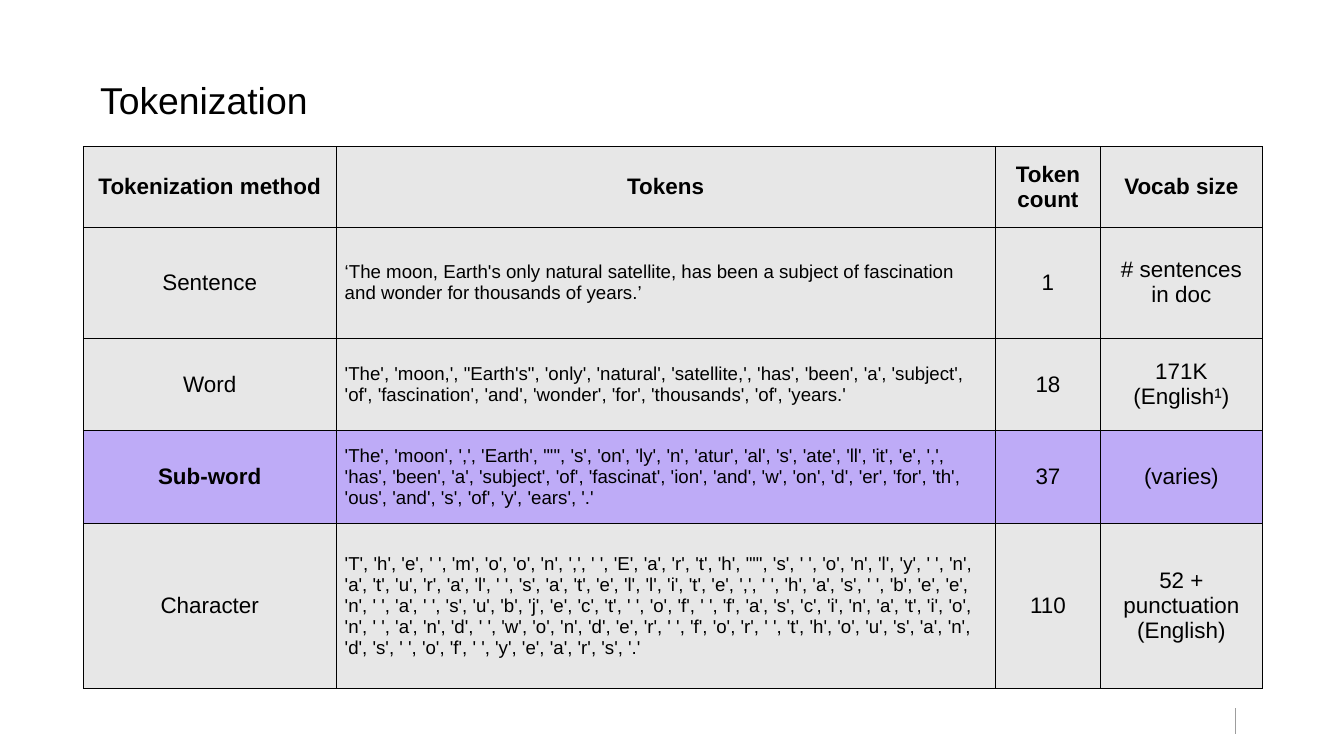
import pptx
import pptx.util
import pptx.dml.color
import pptx.enum.text
import pptx.enum.shapes
import pptx.oxml
import pptx.oxml.ns
from lxml import etree

Inches = pptx.util.Inches
Pt = pptx.util.Pt
RGBColor = pptx.dml.color.RGBColor
qn = pptx.oxml.ns.qn
MIDDLE = pptx.enum.text.MSO_ANCHOR.MIDDLE
ALIGN = pptx.enum.text.PP_ALIGN

BLACK = RGBColor(0x00, 0x00, 0x00)
GREY = RGBColor(0xE7, 0xE7, 0xE7)
PURPLE = RGBColor(0xBE, 0xAB, 0xF7)
RULE = RGBColor(0x9D, 0x9D, 0x9D)


def style(para, size, bold=False):
    para.font.name = "Arial"
    para.font.size = Pt(size)
    para.font.bold = bold
    para.font.color.rgb = BLACK


def border(cell):
    props = cell._tc.get_or_add_tcPr()
    for place, side in enumerate(("lnL", "lnR", "lnT", "lnB")):
        line = etree.Element(qn("a:" + side), w=str(Pt(1)))
        fill = etree.SubElement(line, qn("a:solidFill"))
        etree.SubElement(fill, qn("a:srgbClr"), val=str(BLACK))
        props.insert(place, line)


deck = pptx.Presentation()
deck.slide_width = Inches(20)
deck.slide_height = Inches(11.25)
slide = deck.slides.add_slide(deck.slide_layouts[6])

# Footer rule
rule = slide.shapes.add_connector(
    pptx.enum.shapes.MSO_CONNECTOR.STRAIGHT,
    Inches(18.38), Inches(10.54), Inches(18.38), Inches(10.92))
rule.line.color.rgb = RULE
rule.line.width = Pt(1)
etree.SubElement(rule._element.spPr, qn("a:effectLst"))

# Title
title = slide.shapes.add_textbox(
    Inches(1.49), Inches(0.71), Inches(16.62), Inches(1.63))
frame = title.text_frame
frame.word_wrap = True
frame.vertical_anchor = MIDDLE
frame.margin_left = frame.margin_right = 0
frame.margin_top = frame.margin_bottom = Inches(0.07)
para = frame.paragraphs[0]
para.text = "Tokenization"
para.line_spacing = 0.9
style(para, 40)

# One sentence, split four ways; each list shows as quoted tokens
text = ("The moon, Earth's only natural satellite, has been a subject of "
        "fascination and wonder for thousands of years.")
parts = ("The moon , Earth ' s on ly n atur al s ate ll it e , has been a "
         "subject of fascinat ion and w on d er for th ous and s of y ears .")
words, pieces, chars = [
    str(tokens)[1:-1] for tokens in (text.split(), parts.split(), list(text))]

rows = [
    ("Tokenization method", "Tokens", "Token count", "Vocab size"),
    ("Sentence", f"‘{text}’", "1", "# sentences in doc"),
    ("Word", words, "18", "171K (English¹)"),
    ("Sub-word", pieces, "37", "(varies)"),
    ("Character", chars, "110", "52 + punctuation (English)"),
]
widths = [3.76, 9.81, 1.57, 2.4]
heights = [1.2, 1.65, 1.38, 1.38, 2.46]

# Table
table = slide.shapes.add_table(
    len(rows), len(widths), Inches(1.24), Inches(2.18),
    Inches(sum(widths)), Inches(sum(heights))).table
for col, width in zip(table.columns, widths):
    col.width = Inches(width)
for row, height in zip(table.rows, heights):
    row.height = Inches(height)

for r, row in enumerate(rows):
    for c, words in enumerate(row):
        cell = table.cell(r, c)
        chosen = row[0] == "Sub-word"
        tokens = r > 0 and c == 1
        cell.fill.solid()
        cell.fill.fore_color.rgb = PURPLE if chosen else GREY
        border(cell)
        cell.vertical_anchor = MIDDLE
        cell.margin_left = cell.margin_right = Inches(0.13)
        cell.margin_top = cell.margin_bottom = Inches(0.15)
        para = cell.text_frame.paragraphs[0]
        para.text = words
        para.alignment = ALIGN.LEFT if tokens else ALIGN.CENTER
        style(para, 20 if tokens else 24, r == 0 or (chosen and c == 0))

deck.save("out.pptx")
